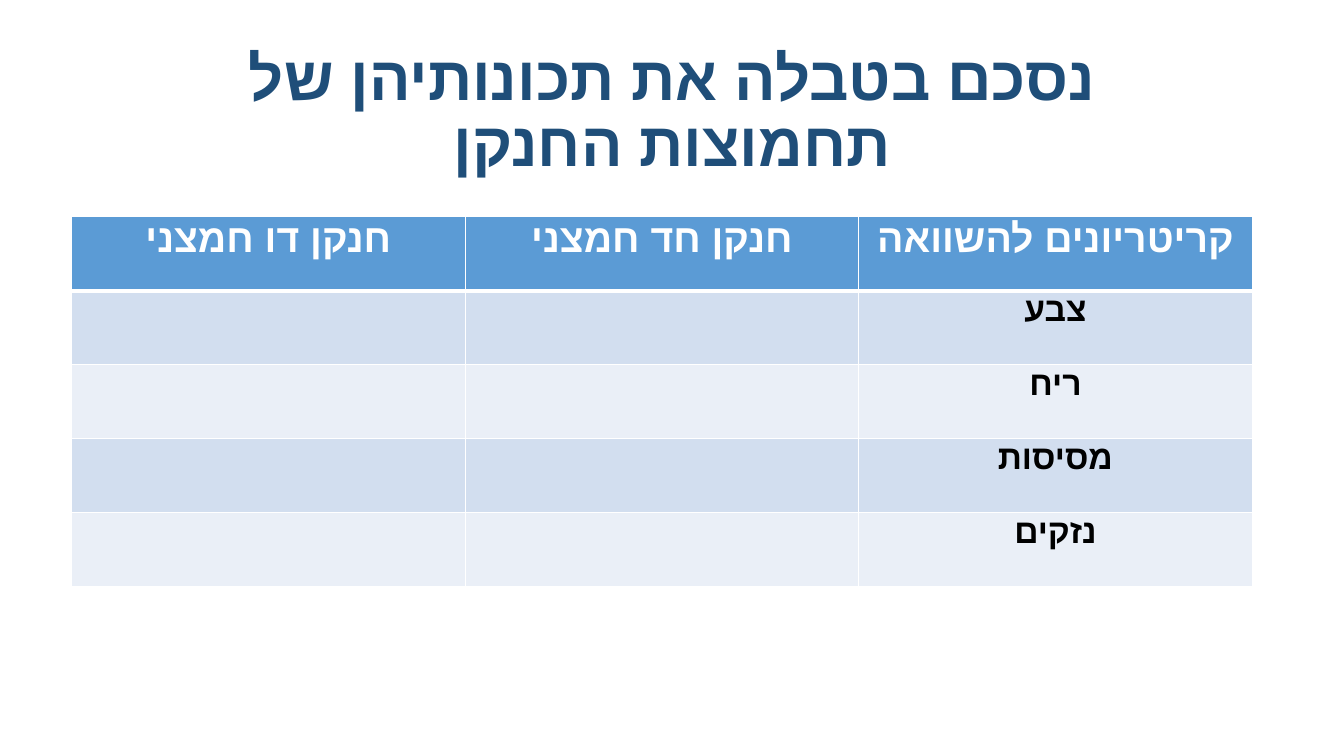
from lxml import etree
from pptx import Presentation
from pptx.dml.color import RGBColor
from pptx.enum.lang import MSO_LANGUAGE_ID
from pptx.enum.text import MSO_ANCHOR, MSO_AUTO_SIZE, PP_ALIGN
from pptx.oxml.ns import qn
from pptx.util import Inches, Pt

CENTER = PP_ALIGN.CENTER
MIDDLE = MSO_ANCHOR.MIDDLE
NO_AUTOFIT = MSO_AUTO_SIZE.NONE
HEBREW = MSO_LANGUAGE_ID.HEBREW

FONT = "Calibri"
HEBREW_FONT = "Arial"
WHITE = "FFFFFF"
BLACK = "000000"
TITLE_COLOR = "1F4E79"
HEADER_FILL = "5B9BD5"
BAND_FILLS = ("D2DEEF", "EAEFF7")

SLIDE_WIDTH, SLIDE_HEIGHT = 13.33, 7.5
TABLE_LEFT, TABLE_TOP = 0.71, 2.15
TABLE_WIDTH, TABLE_HEIGHT = 11.71, 3.67

TITLE = "נסכם בטבלה את תכונותיהן של תחמוצות החנקן"
HEADERS = ("חנקן דו חמצני", "חנקן חד חמצני", "קריטריונים להשוואה")
CRITERIA = ("צבע", "ריח", "מסיסות", "נזקים")


def color(value):
    """Turn a hex string into a colour."""
    return RGBColor.from_string(value)


def write_hebrew(text_frame, text, size, text_color):
    """Write one bold, centred right-to-left paragraph."""
    text_frame.text = text
    paragraph = text_frame.paragraphs[0]
    paragraph.alignment = CENTER
    paragraph._p.get_or_add_pPr().set("rtl", "1")
    for run in paragraph.runs:
        font = run.font
        font.size, font.bold, font.name = Pt(size), True, FONT
        font.color.rgb = color(text_color)
        font.language_id = HEBREW
        complex_font = etree.SubElement(run._r.get_or_add_rPr(), qn("a:cs"))
        complex_font.set("typeface", HEBREW_FONT)
    return paragraph


def add_title(slide):
    """Place and format the title placeholder."""
    title = slide.shapes.title
    title.left, title.top = Inches(0.92), Inches(0.4)
    title.width, title.height = Inches(11.5), Inches(1.45)
    text_frame = title.text_frame
    text_frame.word_wrap = True
    text_frame.auto_size = NO_AUTOFIT
    text_frame.vertical_anchor = MIDDLE
    text_frame.margin_left = text_frame.margin_right = Inches(0.4)
    write_hebrew(text_frame, TITLE, 44, TITLE_COLOR).line_spacing = 0.9


def set_borders(cell, top, bottom):
    """Draw white borders with the given top and bottom widths."""
    properties = cell._tc.get_or_add_tcPr()
    for side, width in (("L", 1), ("R", 1), ("T", top), ("B", bottom)):
        line = etree.SubElement(properties, qn(f"a:ln{side}"), w=str(Pt(width)))
        fill = etree.SubElement(line, qn("a:solidFill"))
        etree.SubElement(fill, qn("a:srgbClr"), val=WHITE)


def format_cell(cell, row):
    """Give a cell the margins, borders and fill of its row."""
    cell.margin_top = cell.margin_bottom = 0
    set_borders(cell, 3 if row == 1 else 1, 3 if row == 0 else 1)
    cell.fill.solid()
    cell.fill.fore_color.rgb = color(BAND_FILLS[(row - 1) % 2] if row else HEADER_FILL)


def add_comparison_table(slide):
    """Add the table with headers and the criteria in its last column."""
    row_count, column_count = len(CRITERIA) + 1, len(HEADERS)
    table = slide.shapes.add_table(
        row_count, column_count, Inches(TABLE_LEFT), Inches(TABLE_TOP),
        Inches(TABLE_WIDTH), Inches(TABLE_HEIGHT),
    ).table
    for row in range(row_count):
        for column in range(column_count):
            format_cell(table.cell(row, column), row)
    for column, header in enumerate(HEADERS):
        write_hebrew(table.cell(0, column).text_frame, header, 28, WHITE)
    for row, criterion in enumerate(CRITERIA, start=1):
        write_hebrew(table.cell(row, column_count - 1).text_frame, criterion, 24, BLACK)


def main():
    """Build and save the slide."""
    presentation = Presentation()
    presentation.slide_width = Inches(SLIDE_WIDTH)
    presentation.slide_height = Inches(SLIDE_HEIGHT)
    slide = presentation.slides.add_slide(presentation.slide_layouts[5])
    add_title(slide)
    add_comparison_table(slide)
    presentation.save("out.pptx")


if __name__ == "__main__":
    main()
